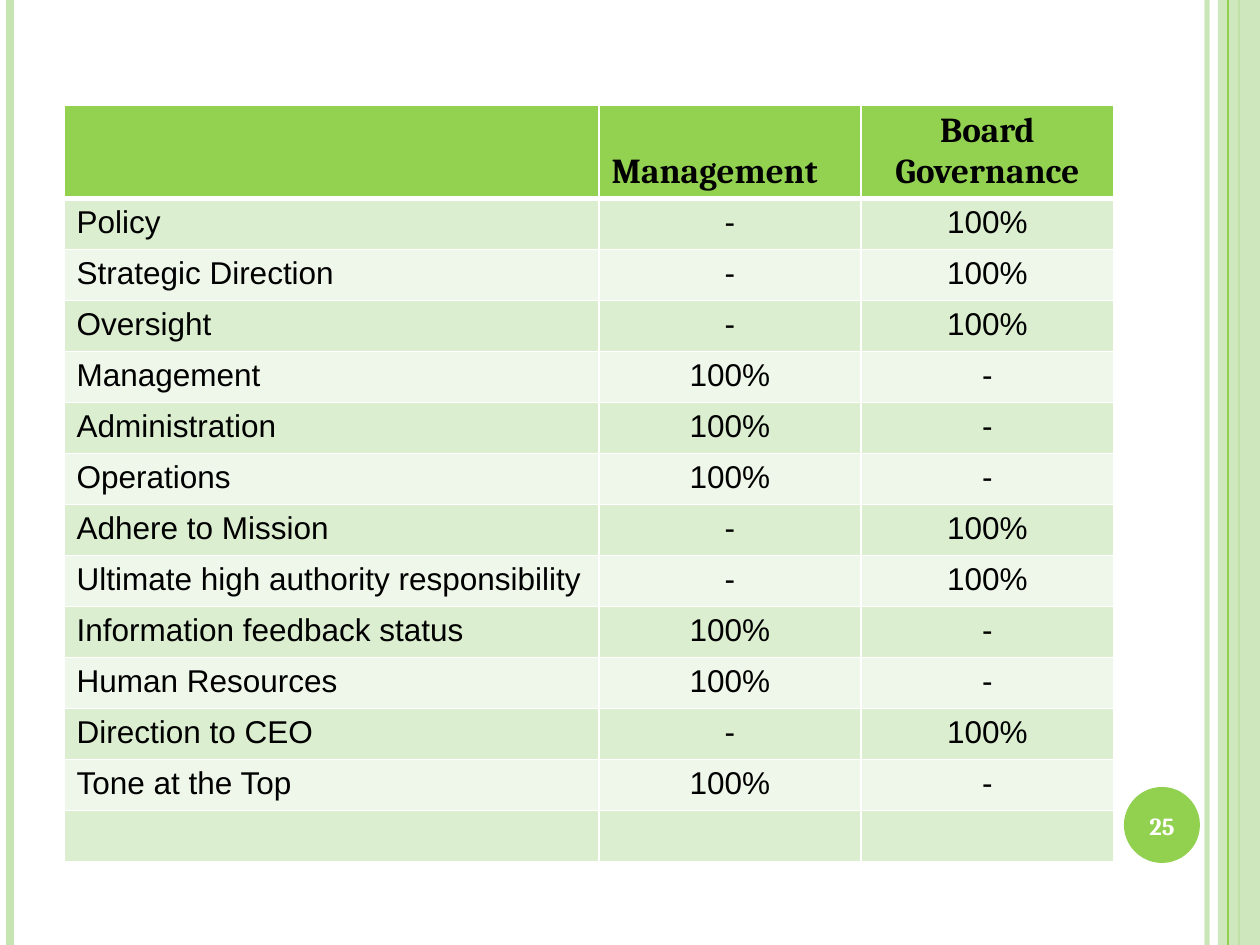
from lxml import etree
from pptx import Presentation
from pptx.dml.color import RGBColor
from pptx.enum.shapes import MSO_CONNECTOR, MSO_SHAPE
from pptx.enum.text import MSO_ANCHOR, PP_ALIGN
from pptx.oxml.ns import qn
from pptx.util import Pt

STRAIGHT = MSO_CONNECTOR.STRAIGHT
RECTANGLE, OVAL = MSO_SHAPE.RECTANGLE, MSO_SHAPE.OVAL
LEFT, CENTER = PP_ALIGN.LEFT, PP_ALIGN.CENTER
TOP, MIDDLE, BOTTOM = MSO_ANCHOR.TOP, MSO_ANCHOR.MIDDLE, MSO_ANCHOR.BOTTOM

SCALE = 914400 / 126
WIDTH, HEIGHT = 1260, 945
COLORS = {
    "pale": "C7E4B3",
    "green": "92D050",
    "header": "93D151",
    "odd": "DCEED0",
    "even": "EEF7E9",
    "white": "FFFFFF",
    "black": "000000",
}

ALL, NONE = "100%", "-"
HEADINGS = ["", "Management", "Board\nGovernance"]
BOARD_DUTIES = {"Policy", "Strategic Direction", "Oversight", "Adhere to Mission",
                "Ultimate high authority responsibility", "Direction to CEO"}
DUTIES = ["Policy", "Strategic Direction", "Oversight", "Management",
          "Administration", "Operations", "Adhere to Mission",
          "Ultimate high authority responsibility", "Information feedback status",
          "Human Resources", "Direction to CEO", "Tone at the Top"]


def px(length):
    return round(length * SCALE)


def color(name):
    return RGBColor.from_string(COLORS[name])


def write(frame, text, size=18, font="Arial", ink="black", bold=False, align=LEFT):
    for index, line in enumerate(text.split("\n")):
        paragraph = frame.paragraphs[0] if index == 0 else frame.add_paragraph()
        paragraph.alignment = align
        paragraph.font.size = Pt(size)
        if line:
            run = paragraph.add_run()
            run.text = line
            run.font.size = Pt(size)
            run.font.name = font
            run.font.bold = bold
            run.font.color.rgb = color(ink)


def set_opacity(element, percent):
    for tone in element.iter(qn("a:srgbClr")):
        etree.SubElement(tone, qn("a:alpha"), val=str(percent * 1000))


class GreenSlide:
    def __init__(self, slide):
        self.shapes = slide.shapes
        self.heading = {"size": 20, "font": "Cambria", "bold": True}

    def stripe(self, x, tone, weight, opacity=100):
        stripe = self.shapes.add_connector(STRAIGHT, px(x), 0, px(x), px(HEIGHT))
        stripe.line.color.rgb = color(tone)
        stripe.line.width = Pt(weight)
        properties = stripe.element.spPr
        if opacity < 100:
            set_opacity(properties, opacity)
        etree.SubElement(properties, qn("a:effectLst"))

    def block(self, kind, x, y, width, height, tone, opacity=100):
        block = self.shapes.add_shape(kind, px(x), px(y), px(width), px(height))
        block.shadow.inherit = False
        block.fill.solid()
        block.fill.fore_color.rgb = color(tone)
        block.line.fill.background()
        if opacity < 100:
            set_opacity(block.element.spPr, opacity)

    def label(self, x, y, width, height, text, **style):
        frame = self.shapes.add_textbox(px(x), px(y), px(width), px(height)).text_frame
        frame.word_wrap = True
        frame.vertical_anchor = MIDDLE
        write(frame, text, **style)

    def cell(self, cell, text, tone, anchor, borders, **style):
        write(cell.text_frame, text, **style)
        cell.vertical_anchor = anchor
        properties = cell._tc.get_or_add_tcPr()
        for side, weight in borders.items():
            border = etree.SubElement(properties, qn(f"a:ln{side}"), w=str(Pt(weight)))
            paint = etree.SubElement(border, qn("a:solidFill"))
            etree.SubElement(paint, qn("a:srgbClr"), val=COLORS["white"])
        cell.fill.solid()
        cell.fill.fore_color.rgb = color(tone)

    def table(self, x, y, widths, heights, rows):
        table = self.shapes.add_table(len(rows), len(widths), px(x), px(y),
                                      px(sum(widths)), px(sum(heights))).table
        for column, width in zip(table.columns, widths):
            column.width = px(width)
        for row, height in zip(table.rows, heights):
            row.height = px(height)
        for r, row in enumerate(rows):
            tone = "header" if r == 0 else "odd" if r % 2 else "even"
            borders = {"L": 1, "R": 1, "T": 3 if r == 1 else 1, "B": 3 if r == 0 else 1}
            for c, text in enumerate(row):
                centered = c == 2 or (c == 1 and r > 0)
                self.cell(table.cell(r, c), text, tone, TOP if r else BOTTOM, borders,
                          align=CENTER if centered else LEFT,
                          **({} if r else self.heading))


def main():
    deck = Presentation()
    deck.slide_width, deck.slide_height = px(WIDTH), px(HEIGHT)
    page = GreenSlide(deck.slides.add_slide(deck.slide_layouts[6]))

    page.stripe(1207, "pale", 3, opacity=93)
    page.stripe(10, "pale", 4.5)
    page.stripe(1239, "green", 1.5)
    page.block(RECTANGLE, 1218, 0, 42, HEIGHT, "pale", opacity=87)
    page.stripe(1228, "green", 0.75)
    page.block(OVAL, 1124, 787, 76, 76, "green")

    shares = [[duty, NONE, ALL] if duty in BOARD_DUTIES else [duty, ALL, NONE]
              for duty in DUTIES]
    rows = [HEADINGS, *shares, [""] * 3]
    page.table(64, 105, [535, 262, 253], [93] + [51] * (len(rows) - 1), rows)
    page.label(1120, 790, 84, 72, "25", size=14, font="Cambria", ink="white",
               bold=True, align=CENTER)
    deck.save("out.pptx")


if __name__ == "__main__":
    main()
